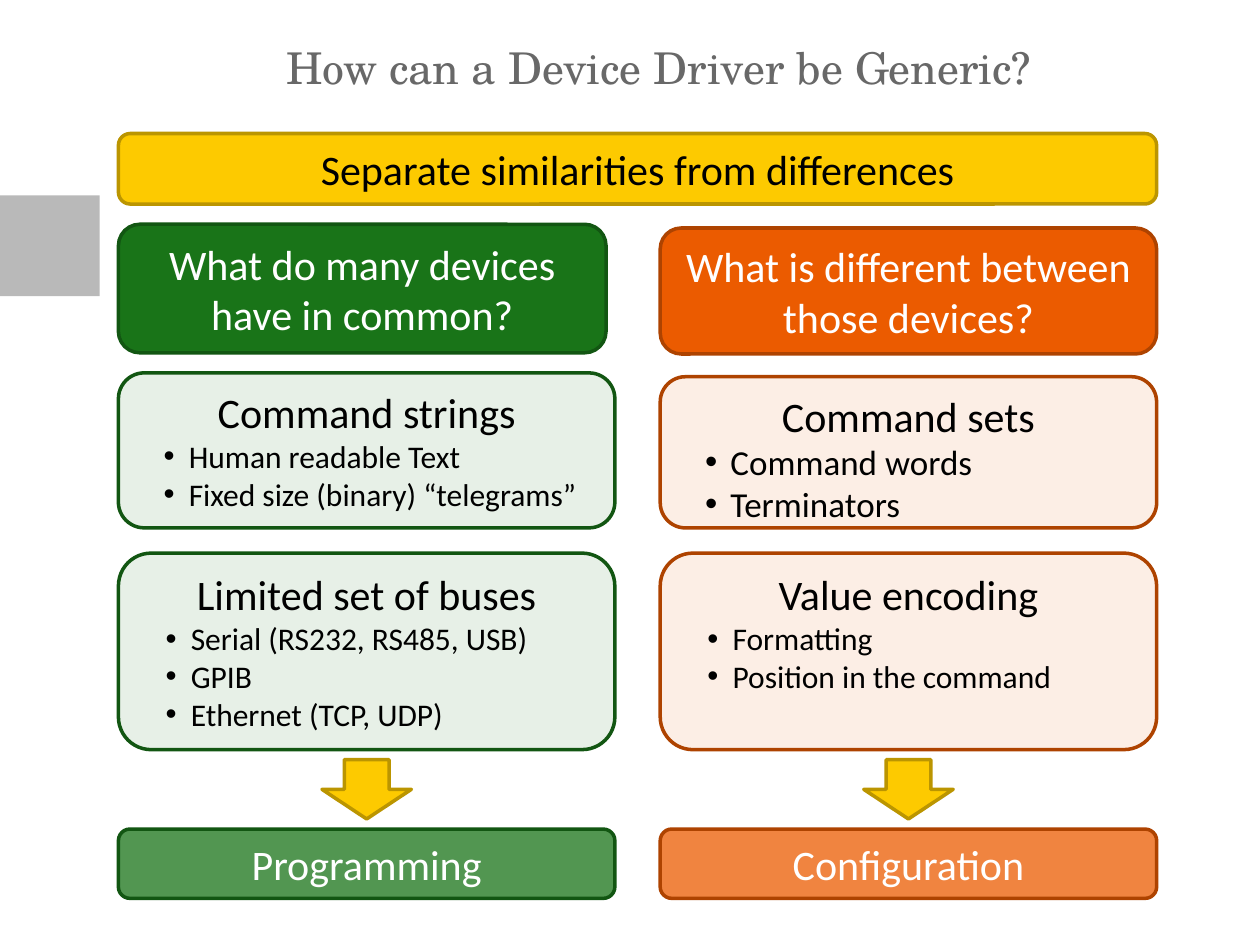
"""Build the slide on generic device drivers."""
import dataclasses

import pptx
import pptx.dml.color
import pptx.enum.shapes
import pptx.enum.text
import pptx.util
from lxml import etree

KIND = pptx.enum.shapes.MSO_SHAPE
ALIGN = pptx.enum.text.PP_ALIGN
ANCHOR = pptx.enum.text.MSO_ANCHOR
NS = "http://schemas.openxmlformats.org/drawingml/2006/main"


@dataclasses.dataclass(frozen=True)
class Theme:
    """Colours, fonts and type sizes of the slide."""
    green: tuple = ("197418", "125612")
    orange: tuple = ("EB5B00", "AE4300")
    gold: tuple = ("FDCA00", "BB9500")
    grey: str = "B9B9B9"
    title: str = "686868"
    dark: str = "000000"
    light: str = "FFFFFF"
    serif: str = "TeX Gyre Schola"
    sans: str = "Calibri"
    big: int = 25
    head: int = 24
    item: int = 18
    large: int = 20
    edge: int = 2


@dataclasses.dataclass(frozen=True)
class Grid:
    """Two equal columns, with a gap between them, in inches."""
    left: float = 0.94
    width: float = 3.94
    gap: float = 0.36

    def col(self, num):
        """Return the left edge of a column."""
        return self.left + num * (self.width + self.gap)

    def span(self, count):
        """Return the width of some joined columns."""
        return count * self.width + (count - 1) * self.gap


THEME = Theme()
GRID = Grid()


def rgb(code):
    """Return a colour from its hex code."""
    return pptx.dml.color.RGBColor.from_string(code)


def add_shape(slide, kind, box, fill, line=None, alpha=100):
    """Add a flat preset shape with an optional outline."""
    shape = slide.shapes.add_shape(kind, *map(pptx.util.Inches, box))
    shape.shadow.inherit = False
    shape.fill.solid()
    shape.fill.fore_color.rgb = rgb(fill)
    if alpha < 100:
        tint = shape.fill._xPr.find(f".//{{{NS}}}srgbClr")
        etree.SubElement(tint, f"{{{NS}}}alpha", val=str(alpha * 1000))
    if line:
        shape.line.color.rgb = rgb(line)
        shape.line.width = pptx.util.Pt(THEME.edge)
    else:
        shape.line.fill.background()
    return shape


def put_text(par, text, size=THEME.head, color=THEME.dark, font=THEME.sans,
             align=ALIGN.CENTER, bullet=False):
    """Write text into a paragraph in the given format."""
    par.alignment = align
    if bullet:
        props = par._p.get_or_add_pPr()
        props.set("marL", str(pptx.util.Inches(0.4)))
        props.set("indent", str(pptx.util.Inches(-0.2)))
        etree.SubElement(props, f"{{{NS}}}buFont", typeface="Arial")
        etree.SubElement(props, f"{{{NS}}}buChar", char="•")
    run = par.add_run()
    run.text = text
    run.font.size = pptx.util.Pt(size)
    run.font.name = font
    run.font.color.rgb = rgb(color)


def add_bar(slide, col, top, high, text, hue, span=1, wide=None, alpha=100,
            color=THEME.light):
    """Add a rounded bar with one centred text."""
    box = (GRID.col(col), top, wide or GRID.span(span), high)
    bar = add_shape(slide, KIND.ROUNDED_RECTANGLE, box, *hue, alpha)
    put_text(bar.text_frame.paragraphs[0], text, color=color)


def add_card(slide, col, top, high, head, items, hue, size=THEME.item):
    """Add a pale rounded card with a heading and bullets."""
    box = (GRID.col(col), top, GRID.width, high)
    card = add_shape(slide, KIND.ROUNDED_RECTANGLE, box, *hue, 10)
    frame = card.text_frame
    frame.vertical_anchor = ANCHOR.TOP
    put_text(frame.paragraphs[0], head)
    for item in items:
        put_text(frame.add_paragraph(), item, size=size,
                 align=ALIGN.LEFT, bullet=True)


def add_arrow(slide, col, top, wide=0.71, high=0.47):
    """Add a gold arrow in the middle of a column."""
    left = GRID.col(col) + (GRID.width - wide) / 2
    add_shape(slide, KIND.DOWN_ARROW, (left, top, wide, high), *THEME.gold)


def set_title(slide, text):
    """Place and format the title."""
    title = slide.shapes.title
    title.left, title.top, title.width, title.height = map(
        pptx.util.Inches, (2.27, 0.32, 7.34, 0.56))
    frame = title.text_frame
    frame.margin_left = frame.margin_right = 0
    frame.margin_top = frame.margin_bottom = 0
    frame.vertical_anchor = ANCHOR.TOP
    put_text(frame.paragraphs[0], text, size=THEME.big, color=THEME.title,
             font=THEME.serif, align=ALIGN.LEFT)


def main():
    """Build and save the slide."""
    deck = pptx.Presentation()
    deck.slide_width = pptx.util.Inches(10)
    deck.slide_height = pptx.util.Inches(7.5)
    slide = deck.slides.add_slide(deck.slide_layouts[5])
    green, orange = THEME.green, THEME.orange

    add_shape(slide, KIND.RECTANGLE, (0, 1.55, 0.79, 0.8), THEME.grey)
    set_title(slide, "How can a Device Driver be Generic?")
    add_bar(slide, 0, 1.06, 0.56, "Separate similarities from differences",
            THEME.gold, span=2, color=THEME.dark)

    add_bar(slide, 0, 1.78, 1.02, "What do many devices have in common?",
            green, wide=3.87)
    add_card(slide, 0, 2.96, 1.23, "Command strings",
             ["Human readable Text", "Fixed size (binary) “telegrams”"], green)
    add_card(slide, 0, 4.39, 1.56, "Limited set of buses",
             ["Serial (RS232, RS485, USB)", "GPIB", "Ethernet (TCP, UDP)"],
             green)

    add_bar(slide, 1, 1.81, 1, "What is different between those devices?",
            orange)
    add_card(slide, 1, 2.99, 1.2, "Command sets",
             ["Command words", "Terminators"], orange, size=THEME.large)
    add_card(slide, 1, 4.39, 1.56, "Value encoding",
             ["Formatting", "Position in the command"], orange)

    ends = (("Programming", green), ("Configuration", orange))
    for col, (text, hue) in enumerate(ends):
        add_arrow(slide, col, 6.03)
        add_bar(slide, col, 6.58, 0.55, text, hue, alpha=75)
    deck.save("out.pptx")


if __name__ == "__main__":
    main()
